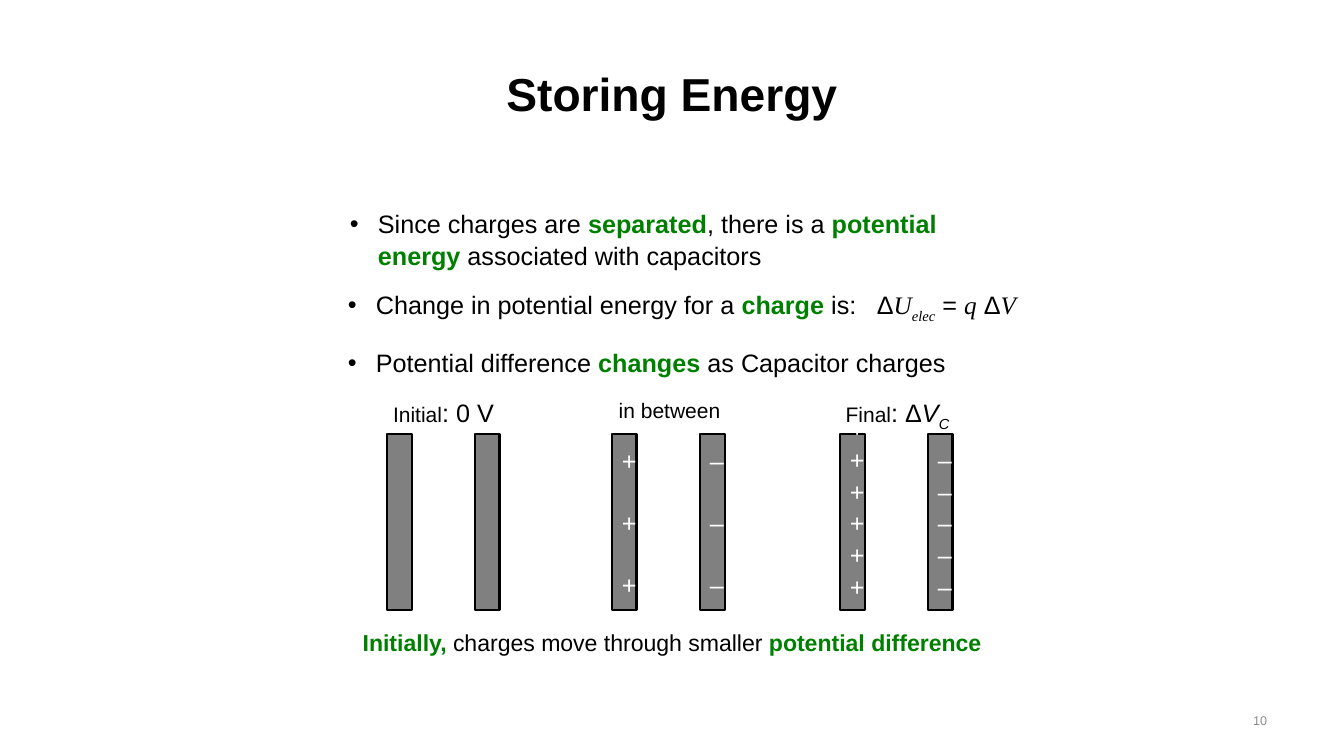
from lxml import etree
from pptx import Presentation
from pptx.dml.color import RGBColor
from pptx.enum.shapes import MSO_SHAPE as Shape
from pptx.enum.text import MSO_ANCHOR as Anchor, PP_ALIGN as Align
from pptx.oxml.ns import qn
from pptx.util import Emu, Pt

SCALE = 914400 / 100.8
BLACK, GREEN, GRAY, WHITE, PALE = "000000", "008000", "808080", "FFFFFF", "8C8C8C"
KEY = {"bold": True, "color": GREEN}
MATH = {"font": "Times New Roman", "italic": True}
SUB = {"italic": True, "baseline": -25000}

TITLE = [("Storing Energy", {"bold": True})]
BULLETS = [
    ((340, 202, 694, 72), [
        ("Since charges are ", {}), ("separated", KEY), (", there is a ", {}),
        ("potential energy", KEY), (" associated with capacitors", {})]),
    ((338, 283, 694, 40), [
        ("Change in potential energy for a ", {}), ("charge ", KEY), ("is:", {})]),
    ((338, 341, 674, 40), [
        ("Potential difference ", {}), ("changes ", KEY), ("as Capacitor charges", {})]),
]
FORMULA = [
    ("Δ", {}), ("U", MATH), ("elec", {**MATH, **SUB}), (" = ", {}),
    ("q", MATH), (" Δ", {}), ("V", MATH)]
SMALL = {"size": 15}
STAGES = [
    (387, (371, 145, 40), [("Initial", SMALL), (": 0 V", {})], 0, 0),
    (612, (594, 151, 35), [("in between", SMALL)], 3, 21.6),
    (840, (822, 151, 40), [("Final", SMALL), (": Δ", {}), ("V", {"italic": True}), ("C", SUB)], 7, 0),
]
SIGNS = ["+", "–"]
SUMMARY = [
    ("Initially, ", KEY), ("charges move through smaller ", {}), ("potential difference", KEY)]
PLATE_TOP, PLATE_WIDTH, PLATE_HEIGHT, PLATE_STEP = 434, 25, 176, 88
LABEL_TOP = 391


def px(*lengths):
    return [Emu(round(length * SCALE)) for length in lengths]


def rgb(value):
    return RGBColor.from_string(value)


def write(box, paragraphs, size=18, color=BLACK, align=Align.LEFT, anchor=Anchor.TOP,
          wrap=True, bullet=False, gap=0, spacing=1.05):
    frame = box.text_frame
    frame.word_wrap = wrap
    frame.vertical_anchor = anchor
    for index, spans in enumerate(paragraphs):
        para = frame.add_paragraph() if index else frame.paragraphs[0]
        para.alignment = align
        para.line_spacing = spacing
        if index < len(paragraphs) - 1:
            para.space_after = Pt(gap)
        if bullet:
            indent = px(28)[0]
            props = para._p.get_or_add_pPr()
            props.set("marL", str(indent))
            props.set("indent", str(-indent))
            etree.SubElement(props, qn("a:buFont")).set("typeface", "Arial")
            etree.SubElement(props, qn("a:buChar")).set("char", "•")
        for text, style in spans:
            span = para.add_run()
            span.text = text
            font = span.font
            font.name = style.get("font", "Arial")
            font.size = Pt(style.get("size", size))
            font.bold = style.get("bold", False)
            font.italic = style.get("italic", False)
            font.color.rgb = rgb(style.get("color", color))
            if "baseline" in style:
                font._element.set("baseline", str(style["baseline"]))


def add_text(page, place, spans, **options):
    box = page.shapes.add_textbox(*px(*place))
    write(box, [spans], **options)
    return box


def add_plate(group, left, sign, count, gap):
    plate = group.shapes.add_shape(
        Shape.RECTANGLE, *px(left, PLATE_TOP, PLATE_WIDTH, PLATE_HEIGHT))
    plate.shadow.inherit = False
    plate.fill.solid()
    plate.fill.fore_color.rgb = rgb(GRAY)
    plate.line.color.rgb = rgb(BLACK)
    plate.line.width = Pt(2)
    if count:
        rows = [[(sign, {})]] * count if gap else [[(sign * count, {})]]
        write(plate, rows, color=WHITE, align=Align.CENTER, anchor=Anchor.MIDDLE, gap=gap)


def main():
    deck = Presentation()
    deck.slide_width, deck.slide_height = px(1344, 756)
    page = deck.slides.add_slide(deck.slide_layouts[6])

    add_text(page, (67, 30, 1210, 126), TITLE, size=33, align=Align.CENTER,
             anchor=Anchor.MIDDLE, spacing=1.0)
    for place, spans in BULLETS:
        add_text(page, place, spans, bullet=True)
    add_text(page, (867, 283, 161, 40), FORMULA, wrap=False)

    for left, (label_left, width, height), label, count, gap in STAGES:
        group = page.shapes.add_group_shape()
        for index, sign in enumerate(SIGNS):
            add_plate(group, left + index * PLATE_STEP, sign, count, gap)
        box = add_text(page, (label_left, LABEL_TOP, width, height), label, align=Align.CENTER)
        if count:
            box.fill.solid()
            box.fill.fore_color.rgb = rgb(WHITE)

    add_text(page, (335, 622, 674, 38), SUMMARY, size=16.5, align=Align.CENTER)
    add_text(page, (964, 701, 313, 40), [("10", {})], size=9, color=PALE,
             align=Align.RIGHT, anchor=Anchor.MIDDLE, spacing=1.0)
    deck.save("out.pptx")


if __name__ == "__main__":
    main()
